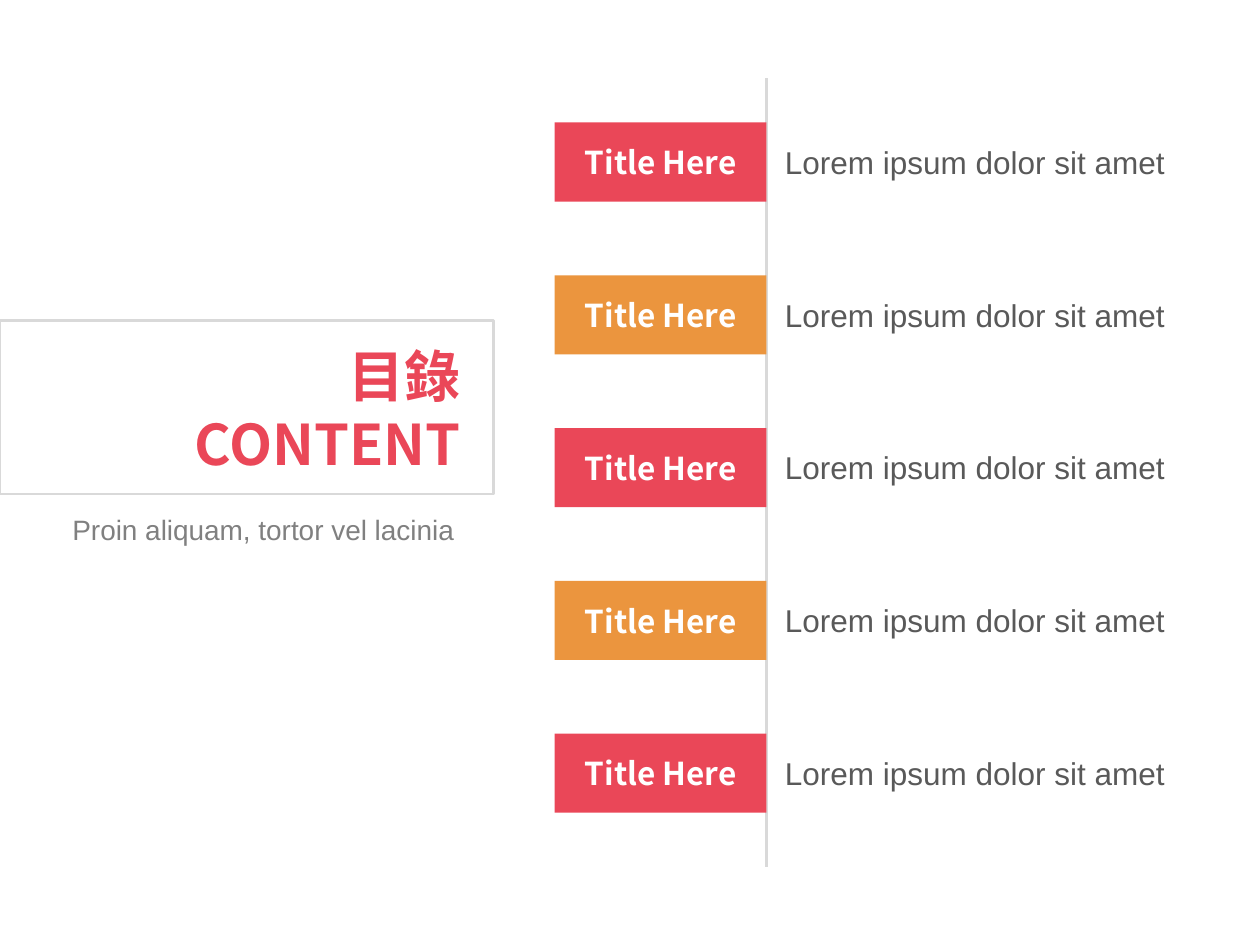
from pptx import Presentation
from pptx.dml.color import RGBColor
from pptx.enum import shapes, text
from pptx.oxml.ns import qn
from pptx.util import Pt
from lxml import etree

# Content
TITLE = ["目錄", "CONTENT"]
SUBTITLE = "Proin aliquam, tortor vel lacinia"
ITEMS = [("Title Here", "Lorem ipsum dolor sit amet")] * 5

# Style
RED, ORANGE, WHITE = "EA4758", "EB953E", "FFFFFF"
RULE, BODY, MUTED = "D9D9D9", "595959", "808080"
SANS, CJK, TITLE_CJK = "Arial", "Noto Sans CJK SC", "Noto Sans CJK JP"

# Layout in points
AXIS_X, AXIS_TOP, AXIS_BOTTOM = 438, 44.6, 495.4
TAG_W, TAG_H, FIRST_TOP, PITCH = 121, 45.2, 70, 87.3
LABEL_X, LABEL_W, LABEL_H = 441.4, 234, 29


def rgb(hex_color):
    return RGBColor.from_string(hex_color)


def add_run(p, words, size, font, color, bold=False):
    r = p.add_run()
    r.text = words
    r.font.size, r.font.name, r.font.bold = Pt(size), font, bold
    r.font.color.rgb = rgb(color)
    etree.SubElement(r.font._element, qn("a:ea"), typeface=font)


def add_rect(s, x, y, w, h, fill=None, line=None):
    sp = s.shapes.add_shape(shapes.MSO_SHAPE.RECTANGLE, Pt(x), Pt(y), Pt(w), Pt(h))
    sp.shadow.inherit = False
    if fill:
        sp.fill.solid()
        sp.fill.fore_color.rgb = rgb(fill)
    else:
        sp.fill.background()
    if line:
        sp.line.color.rgb = rgb(line)
        sp.line.width = Pt(1.5)
    else:
        sp.line.fill.background()
    return sp


def add_label(s, x, y, w, h, words, size, color):
    tf = s.shapes.add_textbox(Pt(x), Pt(y), Pt(w), Pt(h)).text_frame
    tf.word_wrap = False
    add_run(tf.paragraphs[0], words, size, SANS, color)


prs = Presentation()
prs.slide_width, prs.slide_height = Pt(720), Pt(540)
s = prs.slides.add_slide(prs.slide_layouts[5])

# Title frame, title and subtitle
add_rect(s, 0, 183, 282, 99.4, line=RULE)
title = s.shapes.title
title.left, title.top, title.width, title.height = Pt(92), Pt(191), Pt(178.7), Pt(85)
tf = title.text_frame
tf.word_wrap = False
tf.auto_size = text.MSO_AUTO_SIZE.NONE
tf.vertical_anchor = text.MSO_ANCHOR.MIDDLE
for i, words in enumerate(TITLE):
    p = tf.add_paragraph() if i else tf.paragraphs[0]
    p.alignment = text.PP_ALIGN.RIGHT
    p.line_spacing = Pt(39)
    add_run(p, words, 32, TITLE_CJK, RED, bold=True)
add_label(s, 34.3, 289.6, 236, 26.6, SUBTITLE, 16, MUTED)

# Vertical axis
axis = s.shapes.add_connector(shapes.MSO_CONNECTOR.STRAIGHT,
                              Pt(AXIS_X), Pt(AXIS_TOP), Pt(AXIS_X), Pt(AXIS_BOTTOM))
axis.line.color.rgb = rgb(RULE)
axis.line.width = Pt(1.5)
etree.SubElement(axis._element.spPr, qn("a:effectLst"))

# Agenda rows: tag left of the axis, label right of it
for i, (tag, label) in enumerate(ITEMS):
    top = FIRST_TOP + i * PITCH
    sp = add_rect(s, AXIS_X - TAG_W, top, TAG_W, TAG_H, fill=(RED, ORANGE)[i % 2])
    tf = sp.text_frame
    tf.vertical_anchor = text.MSO_ANCHOR.MIDDLE
    p = tf.paragraphs[0]
    p.alignment = text.PP_ALIGN.CENTER
    add_run(p, tag, 18, CJK, WHITE, bold=True)
    add_label(s, LABEL_X, top + (TAG_H - LABEL_H) / 2, LABEL_W, LABEL_H, label, 18, BODY)

prs.save("out.pptx")
